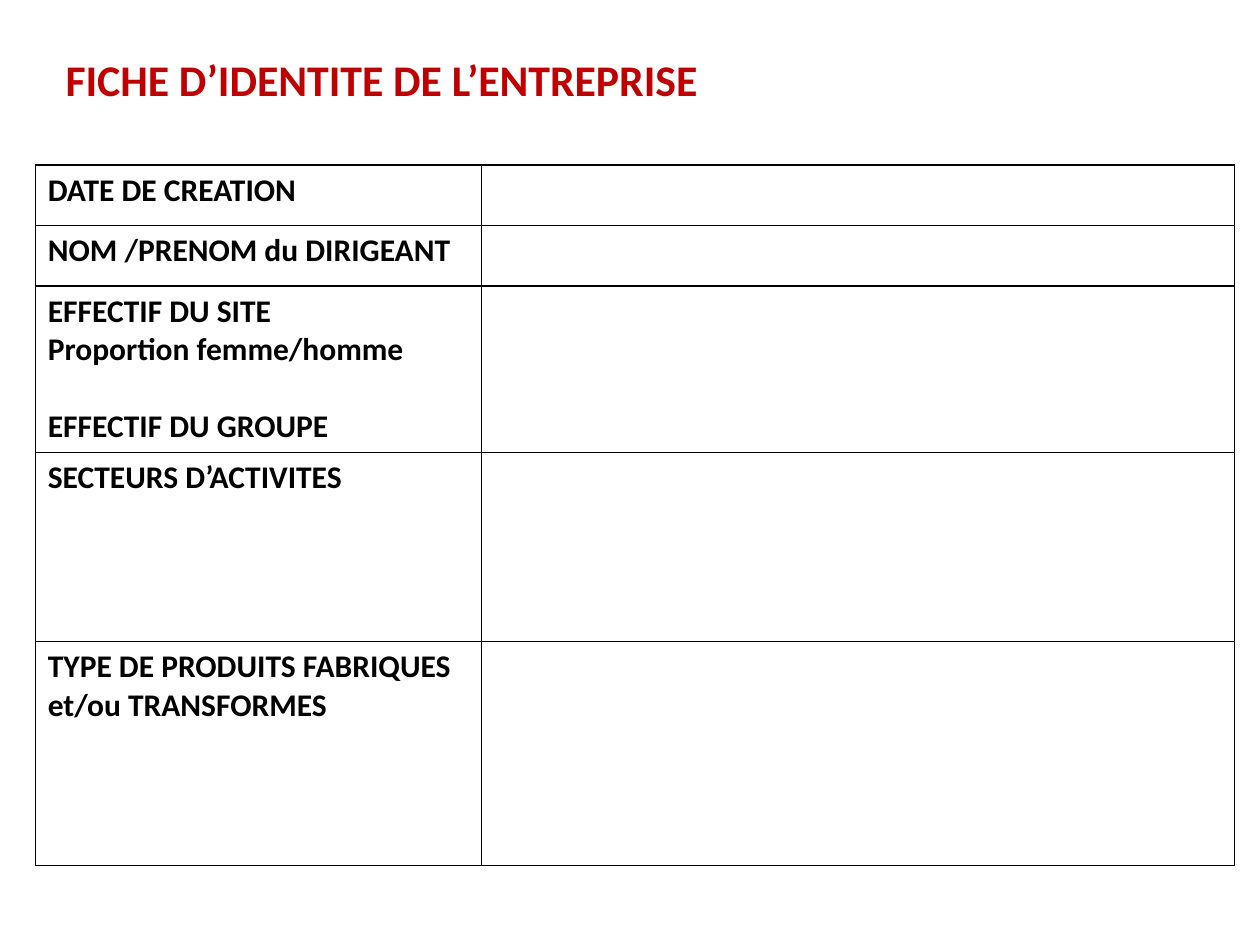
from lxml import etree
from pptx import Presentation
from pptx.dml.color import RGBColor as RGB
from pptx.enum.text import MSO_ANCHOR as Anchor, MSO_AUTO_SIZE as Auto, PP_ALIGN as Align
from pptx.oxml.ns import qn
from pptx.util import Inches, Pt

HUES = {"red": "C00000", "ink": "000000"}


def write(frame, lines, size=18, hue="ink", gaps=None):
    """Fill a text frame, one paragraph a line; gaps maps line index to space before."""
    for i, line in enumerate(lines):
        par = frame.paragraphs[0] if i == 0 else frame.add_paragraph()
        par.text = line
        par.alignment = Align.LEFT
        par.space_before = Pt((gaps or {}).get(i, 0))
        font = par.font
        font.name, font.size, font.bold = "Calibri", Pt(size), True
        font.color.rgb = RGB.from_string(HUES[hue])


def frame_cell(cell):
    """Clear the fill and draw thin lines on all four sides."""
    props = cell._tc.get_or_add_tcPr()
    for side in ("lnL", "lnR", "lnT", "lnB"):
        line = etree.SubElement(props, qn("a:" + side), w=str(Pt(1)))
        fill = etree.SubElement(line, qn("a:solidFill"))
        etree.SubElement(fill, qn("a:srgbClr"), val=HUES["ink"])
    cell.fill.background()


deck = Presentation()
deck.slide_width, deck.slide_height = Inches(10), Inches(7.5)
slide = deck.slides.add_slide(deck.slide_layouts[5])

# Title
title = slide.shapes.title
title.left, title.top = Inches(0.42), Inches(0.37)
title.width, title.height = Inches(6.07), Inches(0.51)
text = title.text_frame
text.auto_size, text.word_wrap = Auto.NONE, True
text.vertical_anchor = Anchor.TOP
write(text, ["FICHE D’IDENTITE DE L’ENTREPRISE"], size=25, hue="red")

# Company form: row height, label lines, space before a line
rows = [
    (0.48, ["DATE DE CREATION"], {}),
    (0.48, ["NOM /PRENOM du DIRIGEANT"], {}),
    (1.32, ["EFFECTIF DU SITE", "Proportion femme/homme", "EFFECTIF DU GROUPE"], {2: 22}),
    (1.5, ["SECTEURS D’ACTIVITES"], {}),
    (1.78, ["TYPE DE PRODUITS FABRIQUES et/ou TRANSFORMES"], {}),
]
cols = [3.54, 5.98]
high = sum(row[0] for row in rows)
form = slide.shapes.add_table(len(rows), len(cols), Inches(0.28), Inches(1.31),
                              Inches(sum(cols)), Inches(high)).table
form.first_row = form.horz_banding = False
for col, wide in zip(form.columns, cols):
    col.width = Inches(wide)
for i, (tall, lines, gaps) in enumerate(rows):
    form.rows[i].height = Inches(tall)
    write(form.cell(i, 0).text_frame, lines, gaps=gaps)
    for cell in form.rows[i].cells:
        frame_cell(cell)

deck.save("out.pptx")
